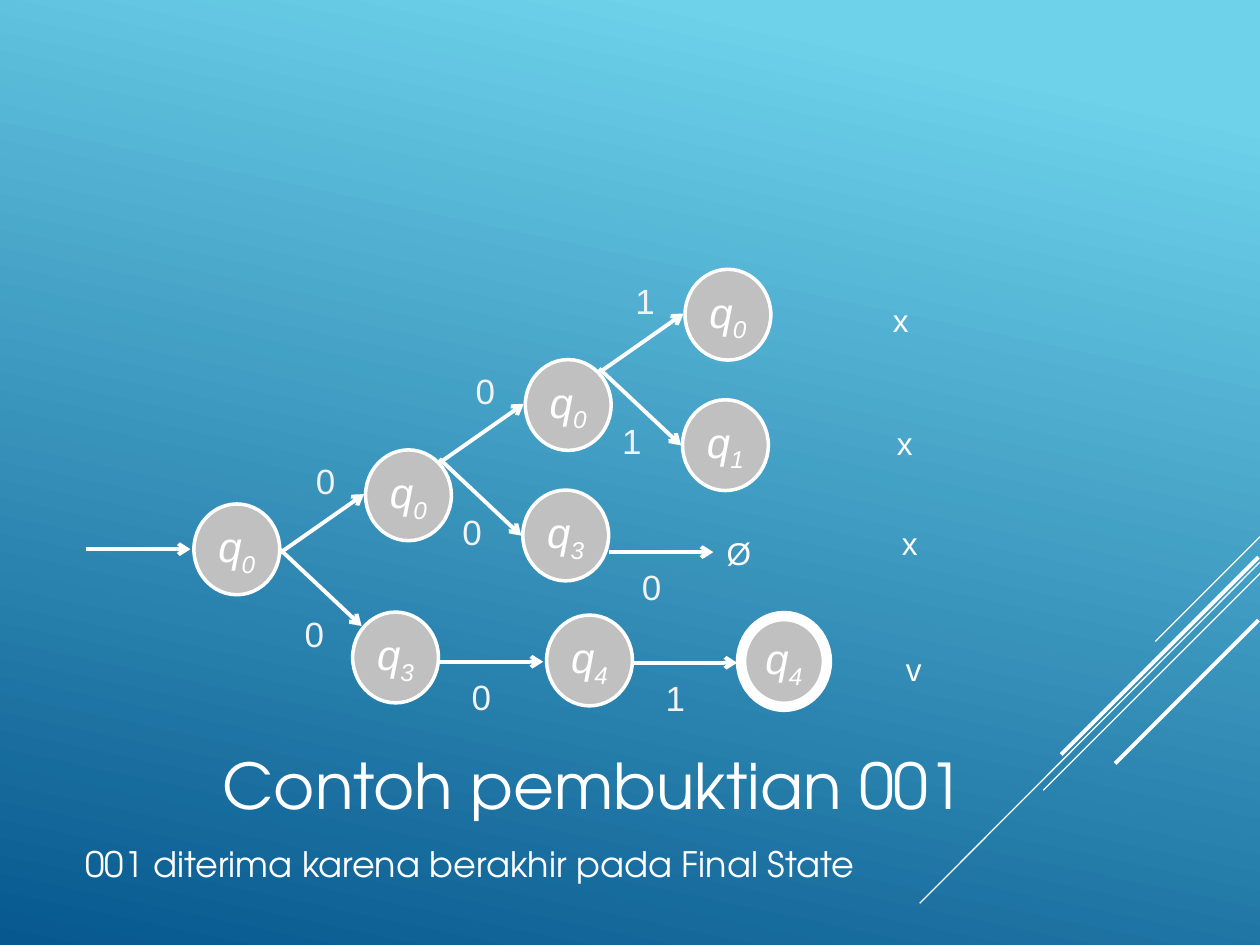
from pptx import Presentation
from pptx.dml.color import RGBColor
from pptx.enum.shapes import MSO_CONNECTOR as Connector, MSO_SHAPE as Shape
from pptx.enum.text import MSO_ANCHOR as Anchor, PP_ALIGN as Align
from pptx.oxml.ns import qn
from pptx.util import Cm, Pt
from lxml.etree import SubElement

WHITE = RGBColor(0xFF, 0xFF, 0xFF)
OFF_WHITE = RGBColor(0xF2, 0xF2, 0xF2)
GREY = RGBColor(0xC0, 0xC0, 0xC0)
SKY = RGBColor(0x6E, 0xD2, 0xEB)
DEEP_BLUE = RGBColor(0x06, 0x58, 0x8E)
HEADING_FONT = "TeX Gyre Adventor"

prs = Presentation()
prs.slide_width, prs.slide_height = Cm(25.4), Cm(19.05)
slide = prs.slides.add_slide(prs.slide_layouts[6])
shapes = slide.shapes


def write(shape, text, subscript="", size=18, font="Arial", color=WHITE, italic=False,
          align=Align.LEFT, anchor=Anchor.TOP, wrap=True, spacing=None):
    frame = shape.text_frame
    frame.word_wrap = wrap
    frame.vertical_anchor = anchor
    paragraph = frame.paragraphs[0]
    paragraph.alignment = align
    paragraph.line_spacing = spacing
    for part in filter(None, (text, subscript)):
        run = paragraph.add_run()
        run.text = part
        run.font.size = Pt(size)
        run.font.name = font
        run.font.italic = italic
        run.font.color.rgb = color
    if subscript:
        run.font._element.set("baseline", "-25000")


def draw_line(x1, y1, x2, y2, width=2.25, arrow=False):
    line = shapes.add_connector(Connector.STRAIGHT, Cm(x1), Cm(y1), Cm(x2), Cm(y2))
    line.line.color.rgb = WHITE
    line.line.width = Pt(width)
    if arrow:
        SubElement(line.line._get_or_add_ln(), qn("a:tailEnd"), type="arrow")
    SubElement(line._element.spPr, qn("a:effectLst"))


# Background and corner strokes
background = slide.background.fill
background.gradient()
background.gradient_angle = 258
for stop, color, position in zip(background.gradient_stops, (SKY, DEEP_BLUE), (0.1, 1)):
    stop.color.rgb = color
    stop.position = position

for x1, y1, x2, y2, width in [
    (25.4, 10.82, 23.29, 12.93, 0.75),
    (25.4, 11.33, 18.54, 18.21, 0.75),
    (25.4, 11.56, 21.03, 15.93, 0.75),
    (25.37, 11.23, 21.39, 15.21, 2.25),
    (25.37, 12.5, 22.48, 15.39, 2.25),
]:
    draw_line(x1, y1, x2, y2, width)

# Title and conclusion
title = shapes.add_textbox(Cm(1.47), Cm(15.09), Cm(18.21), Cm(1.65))
write(title, "Contoh pembuktian 001", size=36, font=HEADING_FONT,
      align=Align.RIGHT, anchor=Anchor.MIDDLE, spacing=0.9)
conclusion = shapes.add_textbox(Cm(1.47), Cm(16.8), Cm(18.21), Cm(1.2))
write(conclusion, "001 diterima karena berakhir pada Final State", size=20,
      font=HEADING_FONT, anchor=Anchor.MIDDLE)

# States: index, left, top, outline width
states = [("0", 3.91, 10.16, 2), ("3", 7.11, 12.34, 2),
          ("4", 11.02, 12.4, 2), ("4", 14.94, 12.42, 6)]
symbols = [("0", 5.89, 12.22)]

# Each input symbol forks the upper branch one step further up and right
for level, symbol in enumerate("001"):
    dx, dy = 3.22 * level, -1.82 * level
    draw_line(5.64 + dx, 11.15 + dy, 7.34 + dx, 9.96 + dy, arrow=True)
    draw_line(5.64 + dx, 11.07 + dy, 7.29 + dx, 12.62 + dy, arrow=True)
    states.append(("0", 7.37 + dx, 9.07 + dy, 2))
    symbols.append((symbol, 6.12 + dx, 9.14 + dy))
    if level:
        states.append(("31"[level - 1], 7.32 + dx, 11.7 + dy, 2))
        symbols.append((symbol, 5.85 + dx, 11.98 + dy))

# Level moves; the entry arrow reads no symbol
for symbol, x, y in [("", 1.73, 11.07), ("0", 12.27, 11.13),
                     ("0", 8.84, 13.34), ("1", 12.75, 13.36)]:
    draw_line(x, y, x + 2.11, y, arrow=True)
    if symbol:
        symbols.append((symbol, x + 0.42, y + 0.15))

for index, x, y, outline in states:
    state = shapes.add_shape(Shape.OVAL, Cm(x), Cm(y), Cm(1.73), Cm(1.83))
    state.shadow.inherit = False
    state.fill.solid()
    state.fill.fore_color.rgb = GREY
    state.line.color.rgb = WHITE
    state.line.width = Pt(outline)
    write(state, "q", subscript=index, size=24, italic=True,
          align=Align.CENTER, anchor=Anchor.MIDDLE, wrap=False)

for symbol, x, y in symbols:
    label = shapes.add_textbox(Cm(x), Cm(y), Cm(1.47), Cm(1.12))
    write(label, symbol, size=20, color=OFF_WHITE)

# Dead end and the verdict on each branch
for mark, x, y, width in [("Ø", 14.4, 10.64, 1.02), ("x", 17.75, 5.94, 0.84),
                          ("x", 17.83, 8.43, 0.84), ("x", 17.93, 10.44, 0.84),
                          ("v", 18.01, 12.98, 0.84)]:
    verdict = shapes.add_textbox(Cm(x), Cm(y), Cm(width), Cm(1.02))
    write(verdict, mark, wrap=False)

prs.save("out.pptx")
